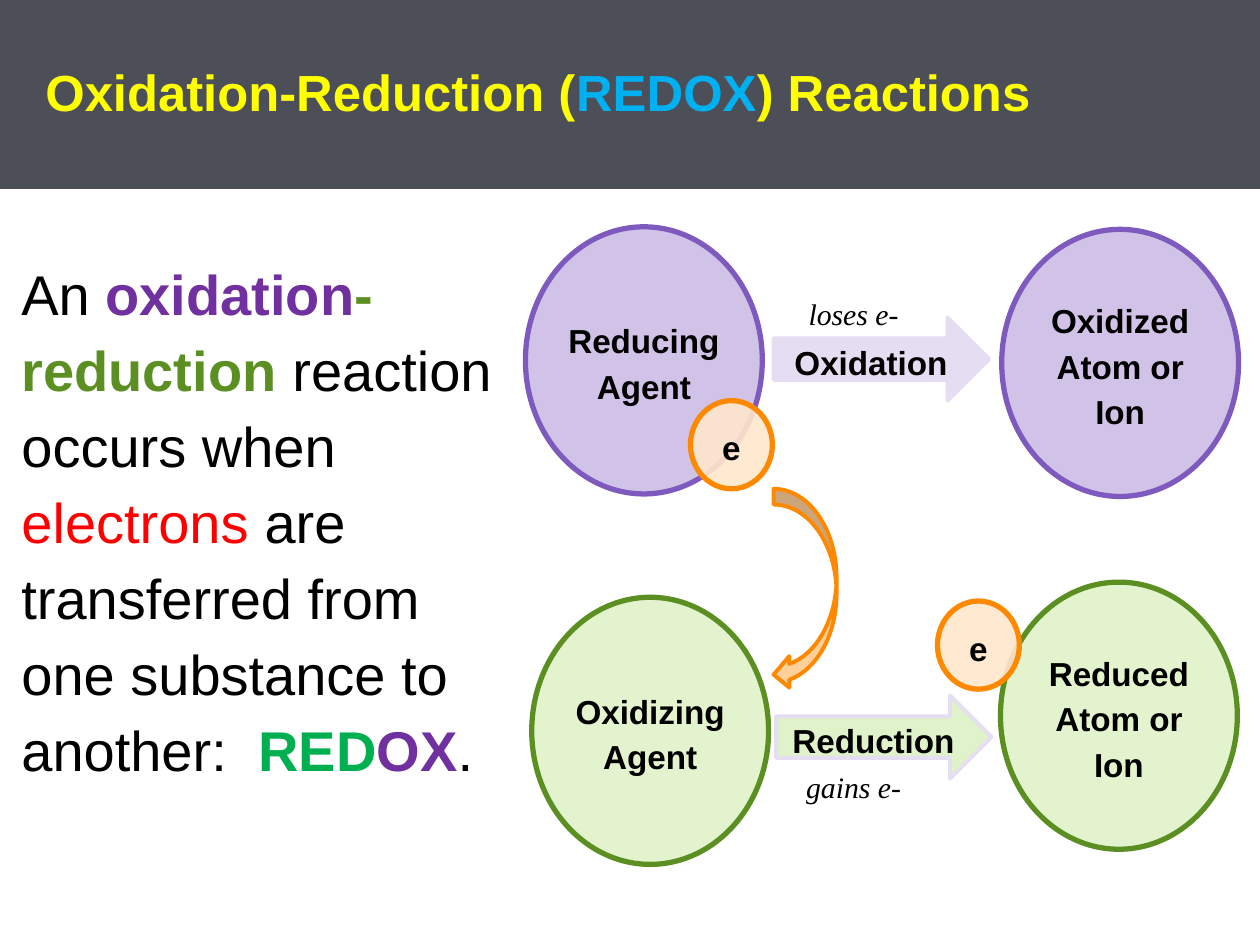
from lxml import etree
from pptx import Presentation
from pptx import util as u
from pptx.dml.color import RGBColor
from pptx.enum import shapes, text
from pptx.oxml import ns

LILAC, VIOLET = "CBBDE5", "7E5ABE"
MINT, GREEN = "DFF2C9", "5B8F22"
PEACH, ORANGE = "FFE7CC", "FE8900"
LAVENDER = "E5DEF2"
BLACK = "000000"

AGENT_SIZE = (1.88, 2.12)
ELECTRON_SIZE = (0.65, 0.7)
ARROW_SIZE = (1.71, 0.66)
CAPTION_SIZE = (1.05, 0.39)


def color(value):
    return RGBColor.from_string(value)


def place(shape, left, top, width, height):
    shape.left, shape.top = u.Inches(left), u.Inches(top)
    shape.width, shape.height = u.Inches(width), u.Inches(height)


def set_frame(shape, insets, anchor):
    frame = shape.text_frame
    frame.word_wrap = True
    frame.auto_size = text.MSO_AUTO_SIZE.NONE
    frame.vertical_anchor = anchor
    (frame.margin_left, frame.margin_top,
     frame.margin_right, frame.margin_bottom) = map(u.Inches, insets)
    return frame


def set_font(font, name, size, bold=False, italic=False):
    font.name, font.size = name, u.Pt(size)
    font.bold, font.italic = bold, italic


def set_indent(paragraph, left, first_line):
    properties = paragraph._p.get_or_add_pPr()
    properties.set("marL", str(u.Inches(left)))
    properties.set("indent", str(u.Inches(first_line)))
    etree.SubElement(properties, ns.qn("a:buNone"))


def add_runs(paragraph, runs):
    for words, run_color, bold in runs:
        run = paragraph.add_run()
        run.text = words
        run.font.bold = bold
        run.font.color.rgb = color(run_color)


def add_title(slide):
    title = slide.shapes.title
    place(title, 0, 0, 10, 1.5)
    title.fill.solid()
    title.fill.fore_color.rgb = color("4D4F58")
    frame = set_frame(title, (0.36, 0.15, 0.36, 0.15), text.MSO_ANCHOR.MIDDLE)
    paragraph = frame.paragraphs[0]
    set_indent(paragraph, 1.25, -1.25)
    paragraph.alignment = text.PP_ALIGN.LEFT
    paragraph.line_spacing = 0.95
    set_font(paragraph.font, "Arial", 29, bold=True)
    add_runs(paragraph, [
        ("Oxidation-Reduction (", "FFFF00", True),
        ("REDOX", "00B0F0", True),
        (") Reactions", "FFFF00", True),
    ])


def add_definition(slide):
    body = slide.placeholders[1]
    place(body, -0.03, 1.89, 4.22, 4.98)
    frame = set_frame(body, (0.2, 0.1, 0, 0.21), text.MSO_ANCHOR.TOP)
    paragraph = frame.paragraphs[0]
    set_indent(paragraph, 0, 0)
    paragraph.line_spacing = 1.13
    paragraph.space_before = u.Pt(0)
    set_font(paragraph.font, "Arial", 32)
    add_runs(paragraph, [
        ("An ", BLACK, False),
        ("oxidation", "7030A0", True),
        ("-reduction ", GREEN, True),
        ("reaction occurs when ", BLACK, False),
        ("electrons ", "FF0000", False),
        ("are transferred from one substance to another:  ", BLACK, False),
        ("RED", "00B050", True),
        ("OX", "7030A0", True),
        (".", BLACK, False),
    ])


def add_figure(slide, kind, position, size, fill, line, weight):
    shape = slide.shapes.add_shape(kind, 0, 0, 0, 0)
    place(shape, *position, *size)
    shape.shadow.inherit = False
    shape.fill.solid()
    shape.fill.fore_color.rgb = color(fill)
    shape.line.color.rgb = color(line)
    shape.line.width = u.Pt(weight)
    return shape


def add_label(shape, words, vertical_inset):
    frame = set_frame(shape, (0, vertical_inset, 0, vertical_inset),
                      text.MSO_ANCHOR.MIDDLE)
    paragraph = frame.paragraphs[0]
    paragraph.text = words
    paragraph.alignment = text.PP_ALIGN.CENTER
    paragraph.line_spacing = 1.15
    set_font(paragraph.font, "Arial", 19, bold=True)
    paragraph.font.color.rgb = color(BLACK)


def add_particle(slide, words, position, size, fill, line):
    shape = add_figure(slide, shapes.MSO_SHAPE.OVAL, position, size, fill, line, 3)
    # Slightly transparent fill
    fill_color = shape.fill._xPr.find(ns.qn("a:solidFill"))[0]
    etree.SubElement(fill_color, ns.qn("a:alpha"), val="90000")
    add_label(shape, words, 0.05)


def add_process_arrow(slide, words, position, fill):
    shape = add_figure(slide, shapes.MSO_SHAPE.RIGHT_ARROW, position,
                       ARROW_SIZE, fill, LAVENDER, 2.25)
    add_label(shape, words, 0)


def add_caption(slide, words, position):
    box = slide.shapes.add_textbox(0, 0, 0, 0)
    place(box, *position, *CAPTION_SIZE)
    frame = set_frame(box, (0.1, 0.05, 0.1, 0.05), text.MSO_ANCHOR.TOP)
    frame.auto_size = text.MSO_AUTO_SIZE.SHAPE_TO_FIT_TEXT
    paragraph = frame.paragraphs[0]
    paragraph.text = words
    paragraph.alignment = text.PP_ALIGN.CENTER
    set_font(paragraph.font, "Times New Roman", 17, italic=True)
    paragraph.font.color.rgb = color(BLACK)


def main():
    presentation = Presentation()
    presentation.slide_width, presentation.slide_height = u.Inches(10), u.Inches(7.5)
    slide = presentation.slides.add_slide(presentation.slide_layouts[1])

    add_definition(slide)
    add_title(slide)

    # Agents and the electron passed between them
    add_particle(slide, "Reducing Agent", (4.17, 1.8), AGENT_SIZE, LILAC, VIOLET)
    add_particle(slide, "Oxidizing Agent", (4.22, 4.74), AGENT_SIZE, MINT, GREEN)
    add_particle(slide, "e", (5.48, 3.18), ELECTRON_SIZE, PEACH, ORANGE)
    add_figure(slide, shapes.MSO_SHAPE.CURVED_LEFT_ARROW, (6.14, 3.88),
               (0.5, 1.6), "FFD099", ORANGE, 2.25)

    # Products
    add_particle(slide, "Reduced Atom or Ion", (7.94, 4.62), AGENT_SIZE, MINT, GREEN)
    add_particle(slide, "e", (7.44, 4.77), ELECTRON_SIZE, PEACH, ORANGE)
    add_particle(slide, "Oxidized Atom or Ion", (7.95, 1.82), AGENT_SIZE, LILAC, VIOLET)

    # Processes and their captions
    add_process_arrow(slide, "Oxidation", (6.14, 2.52), LAVENDER)
    add_process_arrow(slide, "Reduction", (6.16, 5.52), MINT)
    add_caption(slide, "loses e-", (6.25, 2.3))
    add_caption(slide, "gains e-", (6.25, 6.05))

    presentation.save("out.pptx")


if __name__ == "__main__":
    main()
